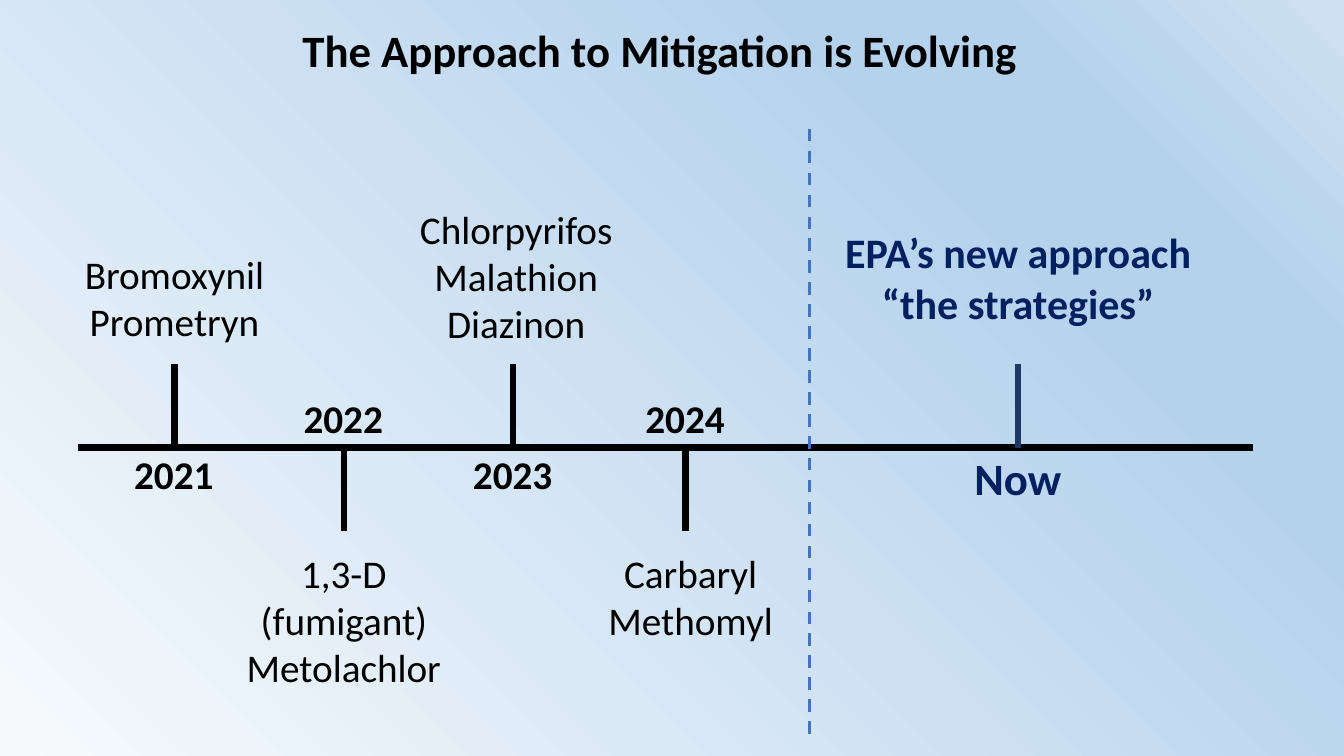
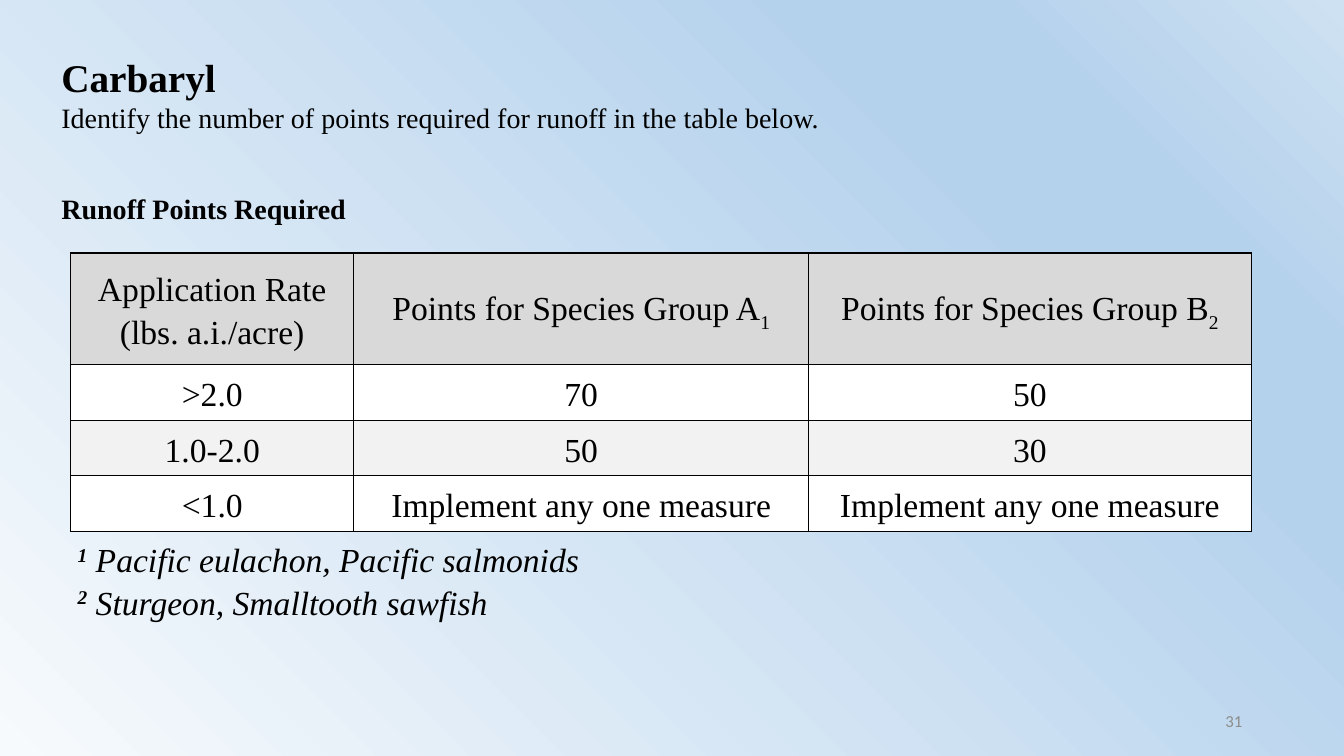
"""Build two slides: a mitigation timeline and a table of runoff points for carbaryl."""
from lxml import etree
from pptx import Presentation
from pptx.dml.color import RGBColor
from pptx.enum.dml import MSO_LINE
from pptx.enum.shapes import MSO_CONNECTOR
from pptx.enum.text import MSO_ANCHOR, PP_ALIGN
from pptx.oxml.ns import qn
from pptx.util import Inches, Pt

BLACK = RGBColor(0x00, 0x00, 0x00)
WHITE = RGBColor(0xFF, 0xFF, 0xFF)
NAVY = RGBColor(0x00, 0x20, 0x60)
TICK_NAVY = RGBColor(0x20, 0x38, 0x64)
DIVIDER_BLUE = RGBColor(0x44, 0x72, 0xC4)
NUMBER_GRAY = RGBColor(0x8C, 0x8C, 0x8C)
HEADER_GRAY = RGBColor(0xD9, 0xD9, 0xD9)
BAND_GRAY = RGBColor(0xF2, 0xF2, 0xF2)
BACKDROP_STOPS = [(0, "F7FAFD"), (74, "B5D2EC"), (83, "B5D2EC"), (100, "CEE1F2")]
SANS, SERIF = "Calibri", "Times New Roman"
PLAIN_TABLE = "{2D5ABB26-0587-4C30-8999-92F81FD0307C}"


def add_label(slide, left, top, width, height, lines, align=PP_ALIGN.CENTER):
    """Add a text box; each line is (text, size, bold, colour, font)."""
    frame = slide.shapes.add_textbox(
        Inches(left), Inches(top), Inches(width), Inches(height)).text_frame
    frame.word_wrap = True
    for index, (text, size, bold, color, font) in enumerate(lines):
        paragraph = frame.add_paragraph() if index else frame.paragraphs[0]
        paragraph.alignment = align
        run = paragraph.add_run()
        run.text = text
        run.font.size = Pt(size)
        run.font.bold = bold
        run.font.color.rgb = color
        run.font.name = font
    return frame


def add_line(slide, x1, y1, x2, y2, color=BLACK, width=4.5):
    """Add a straight line without a shadow."""
    line = slide.shapes.add_connector(
        MSO_CONNECTOR.STRAIGHT, Inches(x1), Inches(y1), Inches(x2), Inches(y2))
    line.line.color.rgb = color
    line.line.width = Pt(width)
    etree.SubElement(line._element.spPr, qn("a:effectLst"))
    return line


prs = Presentation()
prs.slide_width = Inches(13.33)
prs.slide_height = Inches(7.5)
blank = prs.slide_layouts[6]

backdrop = prs.slide_master.background.fill
backdrop.gradient()
backdrop.gradient_angle = 45
stop_list = prs.slide_master.element.find(".//" + qn("a:gsLst"))
for old_stop in list(stop_list):
    stop_list.remove(old_stop)
for percent, color in BACKDROP_STOPS:
    stop = etree.SubElement(stop_list, qn("a:gs"), pos=str(percent * 1000))
    etree.SubElement(stop, qn("a:srgbClr"), val=color)

timeline = prs.slides.add_slide(blank)
add_label(timeline, 2.63, 0.18, 7.83, 0.64,
          [("The Approach to Mitigation is Evolving", 32, True, BLACK, SANS)])

AXIS_Y, TICK = 4.44, 0.83
add_line(timeline, 0.77, AXIS_Y, 12.43, AXIS_Y)
milestones = [
    (1.73, "2021", True, 1.73, 2.43, ["Bromoxynil", "Prometryn"]),
    (3.41, "2022", False, 3.41, 5.4, ["1,3-D (fumigant)", "Metolachlor"]),
    (5.09, "2023", True, 5.12, 1.99, ["Chlorpyrifos", "Malathion", "Diazinon"]),
    (6.8, "2024", False, 6.85, 5.4, ["Carbaryl", "Methomyl"]),
    (10.1, "Now", True, 10.1, 2.2, ["EPA’s new approach", "“the strategies”"]),
]
for x, year, above, center, top, names in milestones:
    now = year == "Now"
    color = NAVY if now else BLACK
    tick_end = AXIS_Y - TICK if above else AXIS_Y + TICK
    add_line(timeline, x, AXIS_Y, x, tick_end, TICK_NAVY if now else BLACK)
    add_label(timeline, x - 0.57, 4.42 if above else 3.86, 1.13, 0.57,
              [(year, 32 if now else 28, True, color, SANS)])
    width = 4.14 if now else 2.65
    add_label(timeline, center - width / 2, top, width, 0.11 + 0.47 * len(names),
              [(name, 30 if now else 28, now, color, SANS) for name in names])

divider = add_line(timeline, 8.03, 7.28, 8.03, 1.27, DIVIDER_BLUE, 2.25)
divider.line.dash_style = MSO_LINE.DASH

runoff = prs.slides.add_slide(blank)
intro = add_label(runoff, 0.51, 0.48, 11.99, 2.24, [
    ("Carbaryl", 28, True, BLACK, SERIF),
    ("Identify the number of points required for runoff in the table below.",
     20, False, BLACK, SERIF),
    ("Runoff Points Required", 20, True, BLACK, SERIF),
], PP_ALIGN.LEFT)
intro.paragraphs[2].space_before = Pt(41.4)

page_number = add_label(runoff, 9.42, 6.95, 3, 0.4,
                        [("31", 12, False, NUMBER_GRAY, SANS)], PP_ALIGN.RIGHT)
page_number.vertical_anchor = MSO_ANCHOR.MIDDLE

rows = [
    [[["Application Rate"], ["(lbs. a.i./acre)"]],
     [["Points for Species Group A", "1"]], [["Points for Species Group B", "2"]]],
    [[[">2.0"]], [["70"]], [["50"]]],
    [[["1.0-2.0"]], [["50"]], [["30"]]],
    [[["<1.0"]], [["Implement any one measure"]], [["Implement any one measure"]]],
    [[["1", " Pacific eulachon, Pacific salmonids"],
      ["2", " Sturgeon, Smalltooth sawfish"]]],
]
row_fills = [HEADER_GRAY, WHITE, BAND_GRAY, WHITE, None]
row_heights = [1.11, 0.55, 0.55, 0.55, 0.96]
column_widths = [2.81, 4.51, 4.39]

points = runoff.shapes.add_table(
    len(rows), len(column_widths), Inches(0.7), Inches(2.51),
    Inches(sum(column_widths)), Inches(sum(row_heights))).table
points.first_row = False
points.horz_banding = False
points._tbl.tblPr.find(qn("a:tableStyleId")).text = PLAIN_TABLE
for column, width in zip(points.columns, column_widths):
    column.width = Inches(width)
for row, height in zip(points.rows, row_heights):
    row.height = Inches(height)
points.cell(4, 0).merge(points.cell(4, 2))

for r, (row, row_fill) in enumerate(zip(rows, row_fills)):
    footnote = row_fill is None
    for c, lines in enumerate(row):
        cell = points.cell(r, c)
        cell.vertical_anchor = MSO_ANCHOR.MIDDLE
        cell.margin_left = cell.margin_right = Inches(0.07)
        cell.margin_top = cell.margin_bottom = 0
        for index, pieces in enumerate(lines):
            paragraph = (cell.text_frame.add_paragraph() if index
                         else cell.text_frame.paragraphs[0])
            paragraph.alignment = PP_ALIGN.LEFT if footnote else PP_ALIGN.CENTER
            paragraph.line_spacing = 1.15
            for piece in pieces:
                run = paragraph.add_run()
                run.text = piece
                run.font.size = Pt(24)
                run.font.name = SERIF
                run.font.color.rgb = BLACK
                run.font.italic = footnote
                if piece in ("1", "2"):
                    run.font.bold = footnote
                    run._r.get_or_add_rPr().set("baseline", "30000" if footnote else "-25000")
        properties = cell._tc.get_or_add_tcPr()
        for side in ("a:lnT",) if footnote else ("a:lnL", "a:lnR", "a:lnT", "a:lnB"):
            border = etree.SubElement(properties, qn(side), w=str(Pt(1)))
            border_fill = etree.SubElement(border, qn("a:solidFill"))
            etree.SubElement(border_fill, qn("a:srgbClr"), val=str(BLACK))
        if footnote:
            cell.fill.background()
        else:
            cell.fill.solid()
            cell.fill.fore_color.rgb = row_fill

prs.save("out.pptx")
